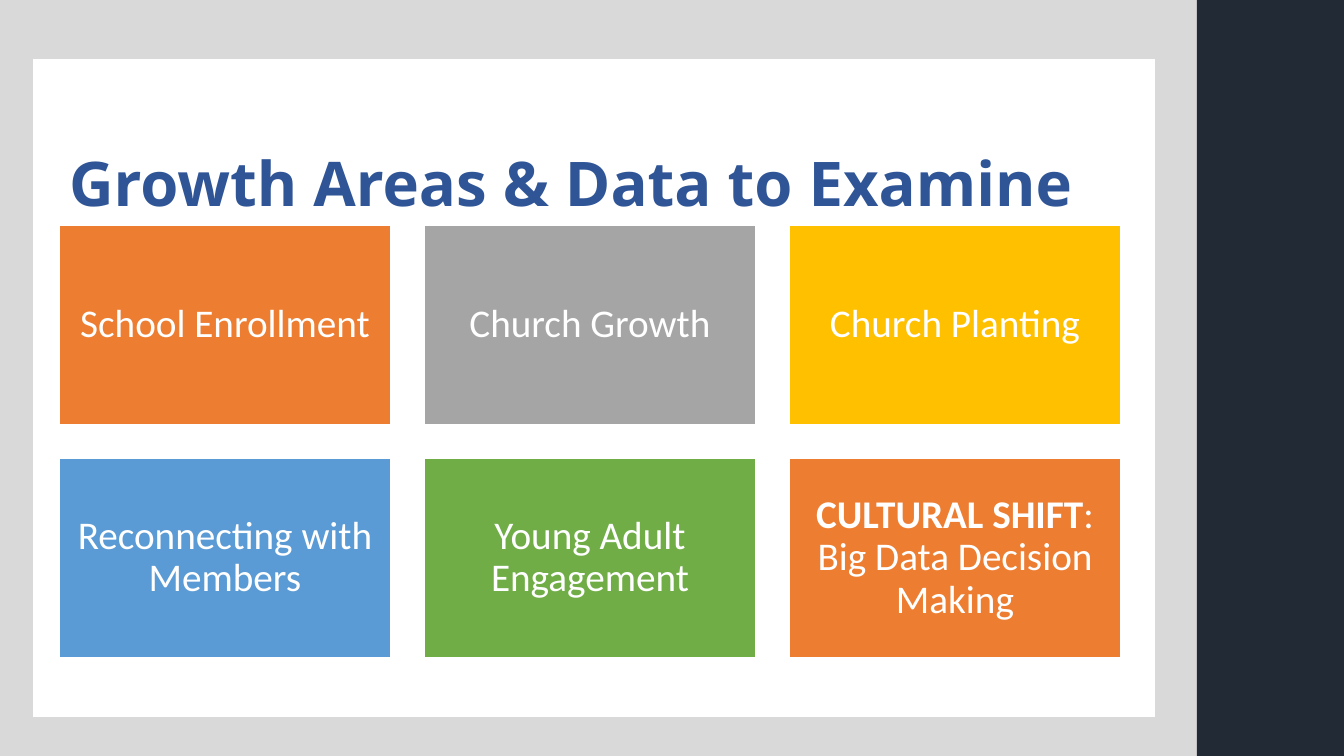
from pptx import Presentation
from pptx.dml.color import RGBColor
from pptx.enum.shapes import MSO_SHAPE
from pptx.enum.text import MSO_ANCHOR, MSO_AUTO_SIZE, PP_ALIGN
from pptx.util import Emu, Pt

RECTANGLE = MSO_SHAPE.RECTANGLE
MIDDLE = MSO_ANCHOR.MIDDLE
NO_AUTOFIT = MSO_AUTO_SIZE.NONE
LEFT, CENTER = PP_ALIGN.LEFT, PP_ALIGN.CENTER

WHITE = RGBColor(0xFF, 0xFF, 0xFF)
LIGHT_GRAY = RGBColor(0xD9, 0xD9, 0xD9)
NAVY = RGBColor(0x22, 0x2A, 0x35)
TITLE_BLUE = RGBColor(0x2F, 0x55, 0x97)
ORANGE = RGBColor(0xED, 0x7D, 0x31)
GRAY = RGBColor(0xA5, 0xA5, 0xA5)
GOLD = RGBColor(0xFF, 0xC0, 0x00)
BLUE = RGBColor(0x5B, 0x9B, 0xD5)
GREEN = RGBColor(0x70, 0xAD, 0x47)

SLIDE_W, SLIDE_H = 1344, 756
EMU_PER_PX = 12192000 / SLIDE_W

# Card grid
COLUMNS = 3
GRID_LEFT, GRID_TOP = 59, 225
CARD_W, CARD_H, GAP = 332, 200, 33
CARD_INSET = 12

# Each card: fill, bold lead, remaining text
GROWTH_AREAS = [
    (ORANGE, "", "School Enrollment"),
    (GRAY, "", "Church Growth"),
    (GOLD, "", "Church Planting"),
    (BLUE, "", "Reconnecting with Members"),
    (GREEN, "", "Young Adult Engagement"),
    (ORANGE, "CULTURAL SHIFT", ": Big Data Decision Making"),
]


def px(length):
    return Emu(round(length * EMU_PER_PX))


def add_block(slide, left, top, width, height, fill):
    block = slide.shapes.add_shape(
        RECTANGLE, px(left), px(top), px(width), px(height))
    block.shadow.inherit = False
    block.fill.solid()
    block.fill.fore_color.rgb = fill
    block.line.fill.background()
    return block


def style_font(font, name, size, color, bold):
    font.name = name
    font.size = Pt(size)
    font.color.rgb = color
    font.bold = bold


def set_title(slide, text):
    title = slide.shapes.title
    # Bring the title in front of the backdrop
    slide.shapes._spTree.append(title._element)
    title.left, title.top = px(59), px(123)
    title.width, title.height = px(1062), px(127)
    frame = title.text_frame
    frame.text = text
    frame.word_wrap = True
    frame.auto_size = NO_AUTOFIT
    frame.vertical_anchor = MIDDLE
    heading = frame.paragraphs[0]
    heading.alignment = LEFT
    heading.line_spacing = 0.9
    style_font(heading.runs[0].font, "Noto Sans", 44, TITLE_BLUE, True)


def add_card(slide, index, fill, lead, text):
    row, column = divmod(index, COLUMNS)
    card = add_block(slide, GRID_LEFT + column * (CARD_W + GAP),
                     GRID_TOP + row * (CARD_H + GAP), CARD_W, CARD_H, fill)
    card.line.color.rgb = WHITE
    card.line.width = Pt(1)
    frame = card.text_frame
    frame.word_wrap = True
    frame.vertical_anchor = MIDDLE
    frame.margin_left = frame.margin_right = px(CARD_INSET)
    frame.margin_top = frame.margin_bottom = px(CARD_INSET)
    label = frame.paragraphs[0]
    label.alignment = CENTER
    label.line_spacing = 0.9
    for words, bold in ((lead, True), (text, False)):
        if words:
            run = label.add_run()
            run.text = words
            style_font(run.font, "Calibri", 28, WHITE, bold)


def main():
    prs = Presentation()
    prs.slide_width, prs.slide_height = px(SLIDE_W), px(SLIDE_H)
    slide = prs.slides.add_slide(prs.slide_layouts[5])

    # Backdrop, content panel and sidebar
    add_block(slide, 0, 0, 1197, SLIDE_H, LIGHT_GRAY)
    add_block(slide, 33, 59, 1122, 658, WHITE)
    add_block(slide, 1197, 0, 147, SLIDE_H, NAVY)

    set_title(slide, "Growth Areas & Data to Examine")

    # Growth area cards
    for index, (fill, lead, text) in enumerate(GROWTH_AREAS):
        add_card(slide, index, fill, lead, text)

    prs.save("out.pptx")


if __name__ == "__main__":
    main()
